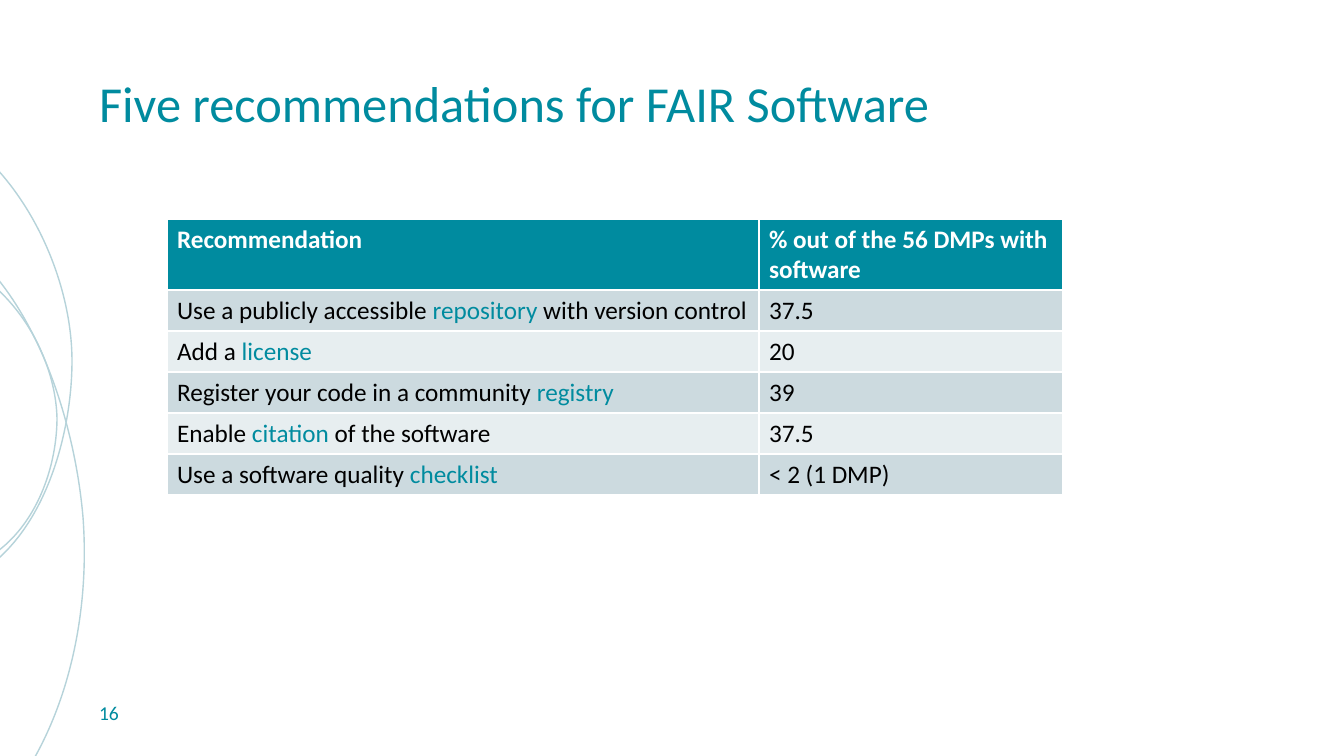
"""Build the slide on five recommendations for FAIR software."""
from lxml import etree
from pptx import Presentation
from pptx import util as u
from pptx.dml.color import RGBColor
from pptx.enum import text
from pptx.oxml.ns import qn

PX = 914400 / 100.8
FONT = "Calibri"
COLORS = {
    "teal": "008B9F",
    "curve": "B6D3DA",
    "odd": "CCDADF",
    "even": "E7EEF0",
    "white": "FFFFFF",
    "black": "000000",
}
CURVES = [
    [(-4, 168), (43, 219), (72, 295), (72, 361), (72, 425), (51, 511), (-1, 558)],
    [(-3, 278), (48, 341), (76, 436), (83, 517), (89, 597), (75, 685), (35, 757)],
    [(-4, 288), (34, 322), (56, 374), (57, 418), (57, 462), (40, 519), (-2, 551)],
]
HEADER = ["Recommendation", "% out of the 56 DMPs with software"]
RECOMMENDATIONS = [
    (["Use a publicly accessible ", "repository ", "with version control"], "37.5"),
    (["Add a ", "license"], "20"),
    (["Register your code in a community ", "registry"], "39"),
    (["Enable ", "citation", " of the software"], "37.5"),
    (["Use a software quality ", "checklist"], "< 2 (1 DMP)"),
]


def px(length):
    """Turn pixels into EMU."""
    return u.Emu(round(length * PX))


def rgb(name):
    """Look up a named colour."""
    return RGBColor.from_string(COLORS[name])


def add_run(paragraph, words, size, color, bold=False):
    """Append one formatted run."""
    run = paragraph.add_run()
    run.text = words
    run.font.name = FONT
    run.font.size = u.Pt(size)
    run.font.bold = bold
    run.font.color.rgb = rgb(color)


def add_label(slide, words, box, size, anchor, spacing=1.0):
    """Add a teal text box without margins."""
    frame = slide.shapes.add_textbox(*map(px, box)).text_frame
    frame.word_wrap = True
    frame.vertical_anchor = anchor
    frame.margin_left = frame.margin_right = 0
    frame.margin_top = frame.margin_bottom = 0
    frame.paragraphs[0].line_spacing = spacing
    add_run(frame.paragraphs[0], words, size, "teal")


def add_curve(slide, points):
    """Draw an open outline through two cubic segments."""
    start, middle, end = points[::3]
    builder = slide.shapes.build_freeform(*map(px, start))
    builder.add_line_segments([tuple(map(px, middle)), tuple(map(px, end))], close=False)
    arc = builder.convert_to_shape()
    straights = list(arc._element.iter(qn("a:lnTo")))
    for straight, controls in zip(straights, (points[1:4], points[4:])):
        cubic = etree.Element(qn("a:cubicBezTo"))
        for x, y in controls:
            etree.SubElement(cubic, qn("a:pt"), x=str(px(x) - arc.left), y=str(px(y) - arc.top))
        straight.getparent().replace(straight, cubic)
    arc.shadow.inherit = False
    arc.fill.background()
    arc.line.color.rgb = rgb("curve")
    arc.line.width = u.Pt(1)


def fill_cell(cell, fill):
    """Give a cell a solid fill."""
    cell.fill.solid()
    cell.fill.fore_color.rgb = rgb(fill)


def add_recommendations(slide):
    """Add the table of recommendations and shares."""
    widths = [592, 304]
    heights = [71] + [41] * len(RECOMMENDATIONS)
    table = slide.shapes.add_table(
        len(heights), len(widths), px(167), px(219), px(sum(widths)), px(sum(heights))
    ).table
    for column, width in zip(table.columns, widths):
        column.width = px(width)
    for row, height in zip(table.rows, heights):
        row.height = px(height)
    for cell, heading in zip(table.rows[0].cells, HEADER):
        fill_cell(cell, "teal")
        add_run(cell.text_frame.paragraphs[0], heading, 18, "white", bold=True)
    for number, (advice, share) in enumerate(RECOMMENDATIONS, 1):
        for cell, parts in zip(table.rows[number].cells, (advice, [share])):
            fill_cell(cell, "odd" if number % 2 else "even")
            for index, words in enumerate(parts):
                color = "teal" if index == 1 else "black"
                add_run(cell.text_frame.paragraphs[0], words, 18, color)


def main():
    """Build and save the slide."""
    deck = Presentation()
    deck.slide_width, deck.slide_height = px(1344), px(756)
    slide = deck.slides.add_slide(deck.slide_layouts[6])
    for points in CURVES:
        add_curve(slide, points)
    add_label(slide, "16", (99, 700, 31, 25), 14, text.MSO_ANCHOR.MIDDLE)
    add_label(slide, "Five recommendations for FAIR Software", (99, 79, 1032, 59), 36,
              text.MSO_ANCHOR.TOP, 0.9)
    add_recommendations(slide)
    deck.save("out.pptx")


if __name__ == "__main__":
    main()
